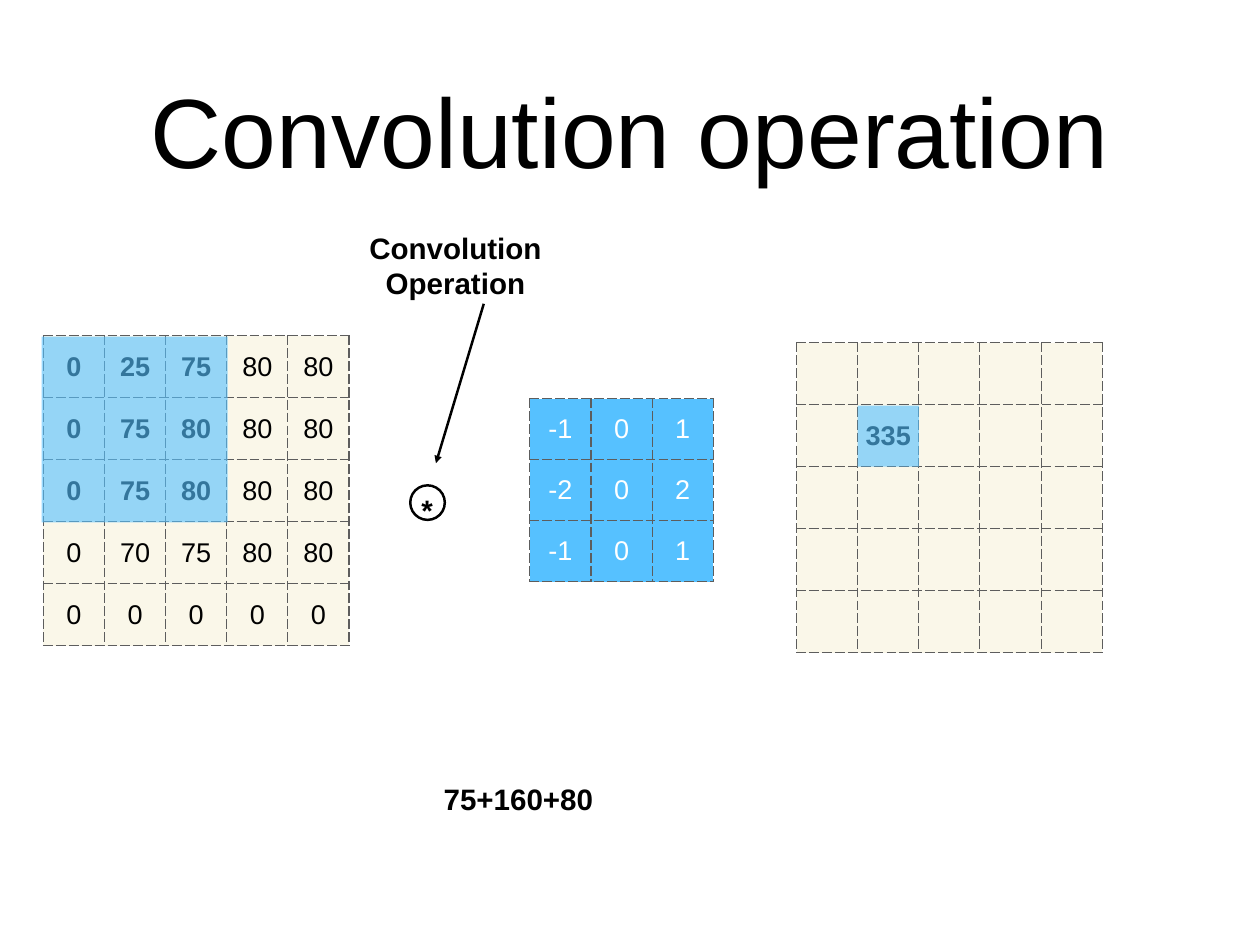
from lxml import etree
from pptx import Presentation
from pptx.dml.color import RGBColor
from pptx.enum import shapes, text
from pptx.oxml import ns
from pptx.util import Inches, Pt

WIDE, HIGH = 14.22, 10.67
CELL, ROW = 0.69, 0.7
PAD = 0.06
FONT = "Arial"
BLACK = RGBColor(0x00, 0x00, 0x00)
WHITE = RGBColor(0xFF, 0xFF, 0xFF)
CREAM = RGBColor(0xFA, 0xF7, 0xE9)
BLUE = RGBColor(0x56, 0xC1, 0xFF)
GREY = RGBColor(0x5D, 0x5D, 0x5D)

TITLE = "Convolution operation"
IMAGE = [
    ["0", "25", "75", "80", "80"],
    ["0", "75", "80", "80", "80"],
    ["0", "75", "80", "80", "80"],
    ["0", "70", "75", "80", "80"],
    ["0", "0", "0", "0", "0"],
]
KERNEL = [["-1", "0", "1"], ["-2", "0", "2"], ["-1", "0", "1"]]
RESULT = [["335" if (r, c) == (1, 1) else "" for c in range(5)] for r in range(5)]

# left, top, values, row height, fill, ink, size of the bold corner
GRIDS = [
    (0.49, 3.79, IMAGE, ROW, CREAM, BLACK, 3),
    (5.98, 4.5, KERNEL, CELL, BLUE, WHITE, 0),
    (8.99, 3.87, RESULT, ROW, CREAM, BLACK, 2),
]
# left, top, side in cells
MARKS = [(0.47, 3.8, 3), (9.68, 4.58, 1)]
# left, top, width, height, words
LABELS = [
    (4.69, 5.5, 0.26, 0.5, "*"),
    (4.04, 2.53, 2.2, 0.93, "Convolution Operation"),
    (4.94, 8.77, 1.82, 0.5, "75+160+80"),
]
RING = (4.63, 5.48, 0.39, 0.39)
ARROW = (5.46, 3.43, 4.92, 5.23)


def box(*sizes):
    return [Inches(n) for n in sizes]


def node(top, tag, **attrs):
    return etree.SubElement(top, ns.qn(tag), **attrs)


def style(para, size, ink, bold):
    para.alignment = text.PP_ALIGN.CENTER
    font = para.font
    font.name, font.size, font.bold = FONT, Pt(size), bold
    font.color.rgb = ink


def inset(frame):
    """Pad a text frame evenly and centre it upright."""
    frame.margin_left = frame.margin_right = Inches(PAD)
    frame.margin_top = frame.margin_bottom = Inches(PAD)
    frame.vertical_anchor = text.MSO_ANCHOR.MIDDLE


def dash(cell):
    """Draw dashed borders on all four sides of a cell."""
    props = cell._tc.get_or_add_tcPr()
    for side in "LRTB":
        line = node(props, f"a:ln{side}", w=str(Pt(1)))
        fill = node(line, "a:solidFill")
        node(fill, "a:srgbClr", val=str(GREY))
        node(line, "a:prstDash", val="lgDash")


def grid(slide, left, top, rows, high, fill, ink, bold):
    count = len(rows)
    frame = slide.shapes.add_table(
        count, count, *box(left, top, count * CELL, count * high))
    table = frame.table
    table.first_row = table.horz_banding = False
    for col in table.columns:
        col.width = Inches(CELL)
    for r, row in enumerate(rows):
        table.rows[r].height = Inches(high)
        for c, word in enumerate(row):
            cell = table.cell(r, c)
            cell.text = word
            inset(cell)
            style(cell.text_frame.paragraphs[0], 22, ink, r < bold and c < bold)
            dash(cell)
            cell.fill.solid()
            cell.fill.fore_color.rgb = fill


def mark(slide, left, top, cells):
    """Lay a see-through square over some cells."""
    side = cells * CELL + (0.03 if cells > 1 else 0)
    rect = slide.shapes.add_shape(
        shapes.MSO_SHAPE.RECTANGLE, *box(left, top, side, side))
    rect.shadow.inherit = False
    rect.line.fill.background()
    rect.fill.solid()
    rect.fill.fore_color.rgb = BLUE
    tint = rect._element.spPr.find(".//" + ns.qn("a:srgbClr"))
    node(tint, "a:alpha", val="61000")


def label(slide, left, top, wide, high, words):
    area = slide.shapes.add_textbox(*box(left, top, wide, high))
    frame = area.text_frame
    frame.word_wrap = " " in words
    inset(frame)
    frame.text = words
    style(frame.paragraphs[0], 24, BLACK, True)


def outline(shape):
    shape.line.color.rgb = BLACK
    shape.line.width = Pt(2)


def main():
    deck = Presentation()
    deck.slide_width, deck.slide_height = box(WIDE, HIGH)
    slide = deck.slides.add_slide(deck.slide_layouts[5])

    title = slide.shapes.title
    title.left, title.top, title.width, title.height = box(1.04, 0.28, 12.14, 2.36)
    title.text = TITLE
    inset(title.text_frame)
    style(title.text_frame.paragraphs[0], 80, BLACK, False)

    for item in GRIDS:
        grid(slide, *item)
    for item in MARKS:
        mark(slide, *item)
    for item in LABELS:
        label(slide, *item)

    ring = slide.shapes.add_shape(shapes.MSO_SHAPE.OVAL, *box(*RING))
    ring.shadow.inherit = False
    ring.fill.background()
    outline(ring)

    arrow = slide.shapes.add_connector(shapes.MSO_CONNECTOR.STRAIGHT, *box(*ARROW))
    outline(arrow)
    node(arrow.line._get_or_add_ln(), "a:tailEnd", type="triangle")
    node(arrow._element.spPr, "a:effectLst")

    deck.save("out.pptx")


if __name__ == "__main__":
    main()
